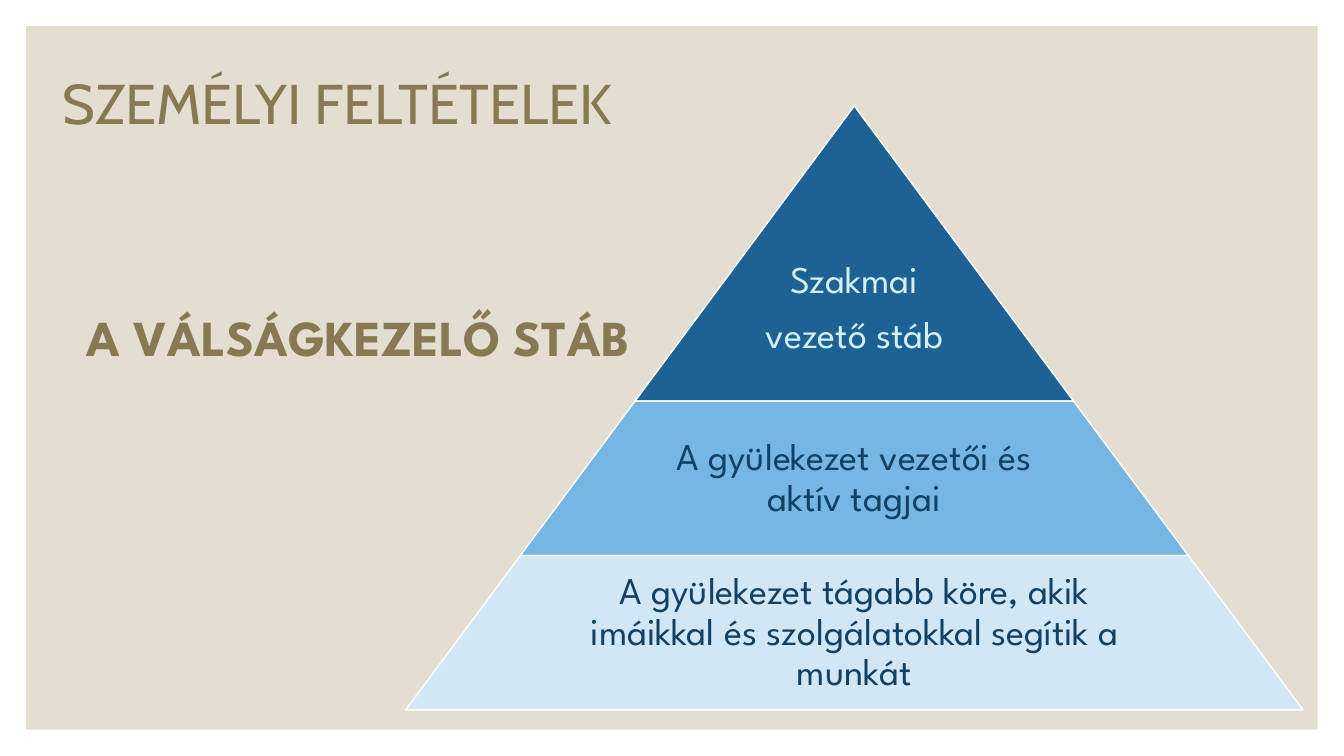
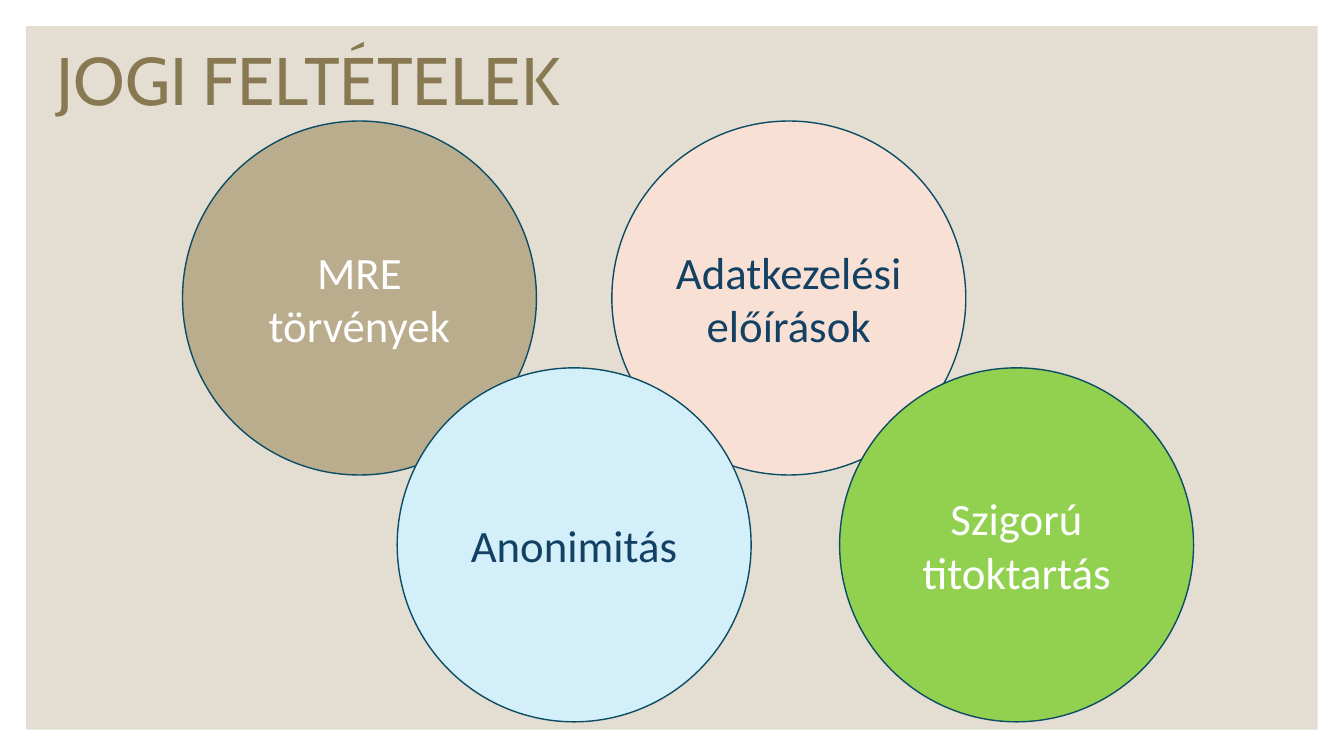
"""Build two slides on the personal and legal conditions of crisis work."""
from pptx import Presentation
from pptx.dml.color import RGBColor as RGB
from pptx.enum.shapes import MSO_SHAPE as SHAPE
from pptx.enum.text import MSO_ANCHOR as ANCHOR, MSO_AUTO_SIZE as AUTO, PP_ALIGN as ALIGN
from pptx.util import Cm, Pt

SAND, GOLD, WHITE = RGB(0xE3, 0xDE, 0xD1), RGB(0x88, 0x79, 0x52), RGB(0xFF, 0xFF, 0xFF)
NAVY, PALE, TEAL = RGB(0x13, 0x41, 0x63), RGB(0xD2, 0xEF, 0xFA), RGB(0x0C, 0x4C, 0x64)
DEEP, SKY, ICE = RGB(0x1D, 0x62, 0x94), RGB(0x75, 0xB6, 0xE5), RGB(0xD1, 0xE7, 0xF6)
TAN, BLUSH, GREEN = RGB(0xBA, 0xAD, 0x8D), RGB(0xF8, 0xE0, 0xD4), RGB(0x92, 0xD0, 0x50)

WIDTH, HEIGHT, MARGIN = 33.87, 19.05, 0.66
TITLE = {"name": "Cabin", "color": GOLD}
SUBTITLE = {"name": "League Spartan", "size": 36, "bold": True, "color": GOLD}
TIER = {"name": "League Spartan", "size": 27}
CIRCLE = {"name": "Calibri", "size": 32}

STAFF_TITLE = ("SZEMÉLYI FELTÉTELEK", 40, (1.32, 1.68, 19.25, 1.98))
STAFF_SUBTITLE = ("A VÁLSÁGKEZELŐ STÁB", (1.57, 6.86, 14.91, 3.43))
APEX_X, APEX_Y, SLOPE, TEXT_SHARE = 21.53, 2.67, 0.743, 0.65
TIERS = [
    (["Szakmai", "vezető stáb"], 7.44, 2.77, DEEP, PALE),
    (["A gyülekezet vezetői és aktív tagjai"], 3.89, 0, SKY, NAVY),
    (["A gyülekezet tágabb köre, akik imáikkal és szolgálatokkal segítik a munkát"],
     3.89, 0, ICE, NAVY),
]

LEGAL_TITLE = ("JOGI FELTÉTELEK", 48, (1.17, 0.69, 23.72, 2.82))
DIAMETER, UPPER, LOWER = 8.92, 3.05, 9.27
CIRCLES = [
    ("MRE törvények", 4.6, UPPER, TAN, WHITE),
    ("Adatkezelési előírások", 15.42, UPPER, BLUSH, NAVY),
    ("Szigorú titoktartás", 21.16, LOWER, GREEN, WHITE),
    ("Anonimitás", 10.01, LOWER, PALE, NAVY),
]


def write(sp, lines, fmt, align=ALIGN.CENTER, spacing=1.0, after=0, inset=None, drop=0):
    """Fill a shape with one formatted paragraph per line."""
    tf = sp.text_frame
    tf.word_wrap, tf.auto_size, tf.vertical_anchor = True, AUTO.NONE, ANCHOR.MIDDLE
    if inset is not None:
        for side in ("left", "right", "top", "bottom"):
            setattr(tf, f"margin_{side}", Cm(inset))
        tf.margin_top = Cm(inset + drop)
    for i, line in enumerate(lines):
        p = tf.paragraphs[0] if i == 0 else tf.add_paragraph()
        layout = {"alignment": align, "line_spacing": spacing,
                  "space_before": Pt(0), "space_after": Pt(after)}
        for key, value in layout.items():
            setattr(p, key, value)
        r = p.add_run()
        r.text = line
        for key, value in fmt.items():
            if key == "color":
                r.font.color.rgb = value
            else:
                setattr(r.font, key, Pt(value) if key == "size" else value)


def add_shape(slide, kind, box, fill, line=None):
    """Add a flat preset shape."""
    sp = slide.shapes.add_shape(kind, *map(Cm, box))
    sp.shadow.inherit = False
    sp.fill.solid()
    sp.fill.fore_color.rgb = fill
    if line is None:
        sp.line.fill.background()
    else:
        sp.line.color.rgb, sp.line.width = line, Pt(1)
    return sp


def add_slide(prs, text, size, box):
    """Add a title-only slide with its heading in place."""
    slide = prs.slides.add_slide(prs.slide_layouts[5])
    sp = slide.shapes.title
    for key, value in zip(("left", "top", "width", "height"), box):
        setattr(sp, key, Cm(value))
    write(sp, [text], {**TITLE, "size": size}, ALIGN.LEFT, 0.9)
    return slide


def add_master_panel(prs, slide):
    """Draw the sand panel and move it behind everything on the master."""
    box = (MARGIN, MARGIN, WIDTH - 2 * MARGIN, HEIGHT - 2 * MARGIN)
    panel = add_shape(slide, SHAPE.RECTANGLE, box, SAND).element
    panel.nvSpPr.cNvPr.set("id", "100")
    prs.slide_master.shapes.element.insert(2, panel)


def add_pyramid(slide):
    """Stack the tiers under the apex, widening at a constant slope."""
    depth = 0
    for lines, height, drop, fill, color in TIERS:
        top = APEX_Y + depth
        depth += height
        width = 2 * SLOPE * depth
        sp = add_shape(slide, SHAPE.TRAPEZOID,
                       (APEX_X - width / 2, top, width, height), fill, WHITE)
        sp.adjustments[0] = SLOPE
        width *= TEXT_SHARE
        box = (APEX_X - width / 2, top, width, height)
        write(slide.shapes.add_textbox(*map(Cm, box)), lines, {**TIER, "color": color},
              spacing=0.9, after=10, inset=0.1, drop=drop)


def main():
    """Build and save the deck."""
    prs = Presentation()
    prs.slide_width, prs.slide_height = Cm(WIDTH), Cm(HEIGHT)

    staff = add_slide(prs, *STAFF_TITLE)
    add_master_panel(prs, staff)
    text, box = STAFF_SUBTITLE
    write(staff.shapes.add_textbox(*map(Cm, box)), [text], SUBTITLE, spacing=0.9)
    add_pyramid(staff)

    legal = add_slide(prs, *LEGAL_TITLE)
    for text, left, top, fill, color in CIRCLES:
        sp = add_shape(legal, SHAPE.OVAL, (left, top, DIAMETER, DIAMETER), fill, TEAL)
        write(sp, [text], {**CIRCLE, "color": color})

    prs.save("out.pptx")


if __name__ == "__main__":
    main()
